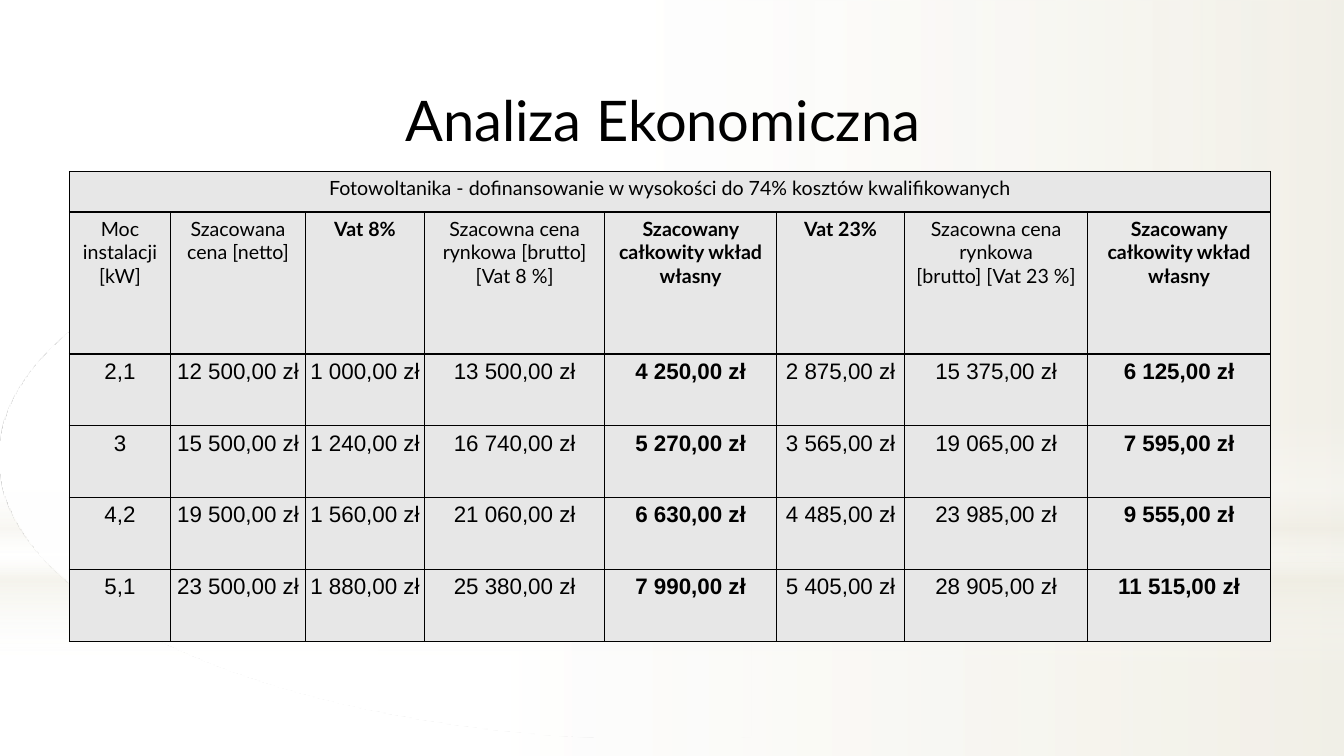
"""Build the slide with the economic analysis of photovoltaic installations."""
from lxml import etree
from pptx import Presentation
from pptx import util as u
from pptx.dml.color import RGBColor
from pptx.enum import shapes, text
from pptx.oxml import parse_xml
from pptx.oxml.ns import nsdecls, qn

COLORS = {"text": "000000", "border": "000000", "cell": "E7E7E7",
          "white": "FFFFFF", "beige": "EEECE1"}
TITLE = "Analiza Ekonomiczna"
CAPTION = "Fotowoltanika - dofinansowanie w wysokości do 74% kosztów kwalifikowanych"
HEADERS = ["Moc instalacji [kW]", "Szacowana cena [netto]", "Vat 8%",
           "Szacowna cena rynkowa [brutto]\v[Vat 8 %]",
           "Szacowany całkowity wkład własny", "Vat 23%",
           "Szacowna cena rynkowa\v[brutto] [Vat 23 %]",
           "Szacowany całkowity wkład własny"]
PRICES = [
    ["2,1", "12 500,00 zł", "1 000,00 zł", "13 500,00 zł", "4 250,00 zł",
     "2 875,00 zł", "15 375,00 zł", "6 125,00 zł"],
    ["3", "15 500,00 zł", "1 240,00 zł", "16 740,00 zł", "5 270,00 zł",
     "3 565,00 zł", "19 065,00 zł", "7 595,00 zł"],
    ["4,2", "19 500,00 zł", "1 560,00 zł", "21 060,00 zł", "6 630,00 zł",
     "4 485,00 zł", "23 985,00 zł", "9 555,00 zł"],
    ["5,1", "23 500,00 zł", "1 880,00 zł", "25 380,00 zł", "7 990,00 zł",
     "5 405,00 zł", "28 905,00 zł", "11 515,00 zł"],
]
BOLD_HEADERS = {2, 4, 5, 7}
BOLD_PRICES = {4, 7}
COLUMN_WIDTHS = [2.55, 3.4, 3, 4.54, 4.33, 3.23, 4.61, 4.61]
ROW_HEIGHTS = [1.02, 3.58] + [1.81] * len(PRICES)
SLIDE_WIDTH, SLIDE_HEIGHT = 33.87, 19.05
RECTANGLE = shapes.MSO_SHAPE.RECTANGLE
BACKDROP = [
    (RECTANGLE, 14.17, 4.88, 0,
     [(0, "white", 91), (37, "white", 76), (100, "beige", 79)]),
    (RECTANGLE, 0, 14.17, 0,
     [(0, "white", 89), (48, "white", 62), (100, "beige", 79)]),
    (RECTANGLE, 10.46, 6.35, 90,
     [(0, "white", 0), (29, "white", 30), (45, "beige", 40),
      (55, "white", 26), (65, "beige", 60), (100, "white", 0)]),
    (shapes.MSO_SHAPE.OVAL, 4.45, 14.17, 0,
     [(0, "white", 100), (56, "white", 0)]),
]


def color(name):
    return RGBColor.from_string(COLORS[name])


def add_backdrop(slide, kind, top, height, angle, stops):
    shape = slide.shapes.add_shape(kind, 0, u.Cm(top), u.Cm(SLIDE_WIDTH), u.Cm(height))
    shape.shadow.inherit = False
    shape.line.fill.background()
    stop_xml = "".join(
        f'<a:gs pos="{position * 1000}"><a:srgbClr val="{COLORS[name]}">'
        f'<a:alpha val="{opacity * 1000}"/></a:srgbClr></a:gs>'
        for position, name, opacity in stops)
    gradient = parse_xml(
        f'<a:gradFill {nsdecls("a")} rotWithShape="1"><a:gsLst>{stop_xml}</a:gsLst>'
        f'<a:lin ang="{angle * 60000}" scaled="0"/></a:gradFill>')
    shape._element.spPr.find(qn("a:prstGeom")).addnext(gradient)
    slide.shapes.title._element.addprevious(shape._element)


def format_title(title):
    title.left, title.top = u.Cm(9.96), u.Cm(2.01)
    title.width, title.height = u.Cm(14.91), u.Cm(1.96)
    frame = title.text_frame
    frame.text = TITLE
    frame.word_wrap = True
    frame.auto_size = text.MSO_AUTO_SIZE.NONE
    frame.vertical_anchor = text.MSO_ANCHOR.MIDDLE
    paragraph = frame.paragraphs[0]
    paragraph.alignment = text.PP_ALIGN.LEFT
    set_font(paragraph, "Lato", 40, False)


def set_font(paragraph, name, size, bold):
    font = paragraph.font
    font.name, font.size, font.bold = name, u.Pt(size), bold
    font.color.rgb = color("text")


def add_borders(cell):
    properties = cell._tc.get_or_add_tcPr()
    for index, side in enumerate(("lnL", "lnR", "lnT", "lnB")):
        line = etree.Element(qn(f"a:{side}"), w=str(u.Pt(0.96)))
        fill = etree.SubElement(line, qn("a:solidFill"))
        etree.SubElement(fill, qn("a:srgbClr"), val=COLORS["border"])
        properties.insert(index, line)


def fill_cell(cell, content, name, size, bold):
    cell.text = content
    cell.margin_left = cell.margin_right = u.Cm(0.03)
    cell.margin_top = cell.margin_bottom = u.Cm(0.13)
    cell.fill.solid()
    cell.fill.fore_color.rgb = color("cell")
    add_borders(cell)
    paragraph = cell.text_frame.paragraphs[0]
    paragraph.alignment = text.PP_ALIGN.CENTER
    set_font(paragraph, name, size, bold)


def add_price_table(slide):
    rows = [[CAPTION] + [""] * (len(HEADERS) - 1), HEADERS] + PRICES
    table = slide.shapes.add_table(
        len(rows), len(HEADERS), u.Cm(1.75), u.Cm(4.32),
        u.Cm(sum(COLUMN_WIDTHS)), u.Cm(sum(ROW_HEIGHTS))).table
    for column, width in zip(table.columns, COLUMN_WIDTHS):
        column.width = u.Cm(width)
    for row, height in zip(table.rows, ROW_HEIGHTS):
        row.height = u.Cm(height)
    styles = [("Lato", 14, set()), ("Lato", 14, BOLD_HEADERS)]
    styles += [("Arial", 16, BOLD_PRICES)] * len(PRICES)
    for r, (row, (name, size, bold_columns)) in enumerate(zip(rows, styles)):
        for c, content in enumerate(row):
            fill_cell(table.cell(r, c), content, name, size, c in bold_columns)
    table.cell(0, 0).merge(table.cell(0, len(HEADERS) - 1))


def main():
    presentation = Presentation()
    presentation.slide_width = u.Cm(SLIDE_WIDTH)
    presentation.slide_height = u.Cm(SLIDE_HEIGHT)
    slide = presentation.slides.add_slide(presentation.slide_layouts[5])
    slide.background.fill.solid()
    slide.background.fill.fore_color.rgb = color("white")
    for layer in BACKDROP:
        add_backdrop(slide, *layer)
    format_title(slide.shapes.title)
    add_price_table(slide)
    presentation.save("out.pptx")


if __name__ == "__main__":
    main()
